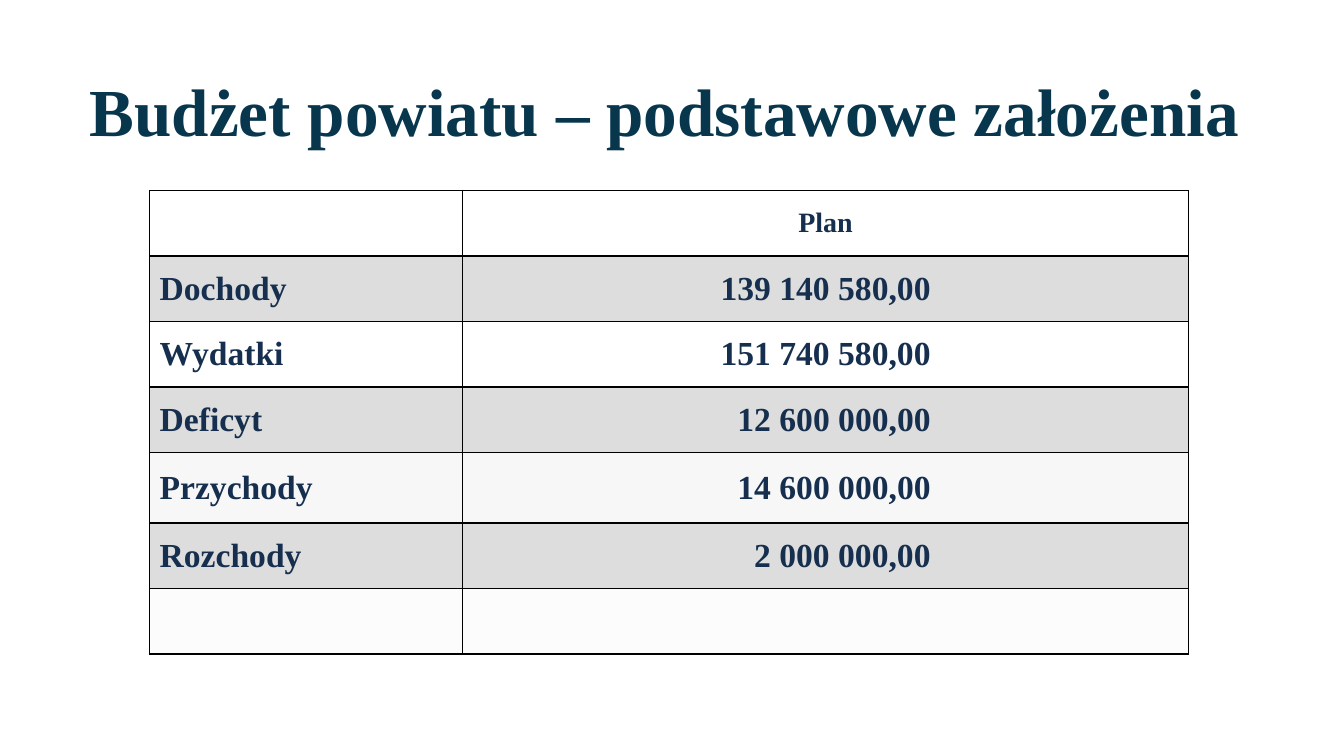
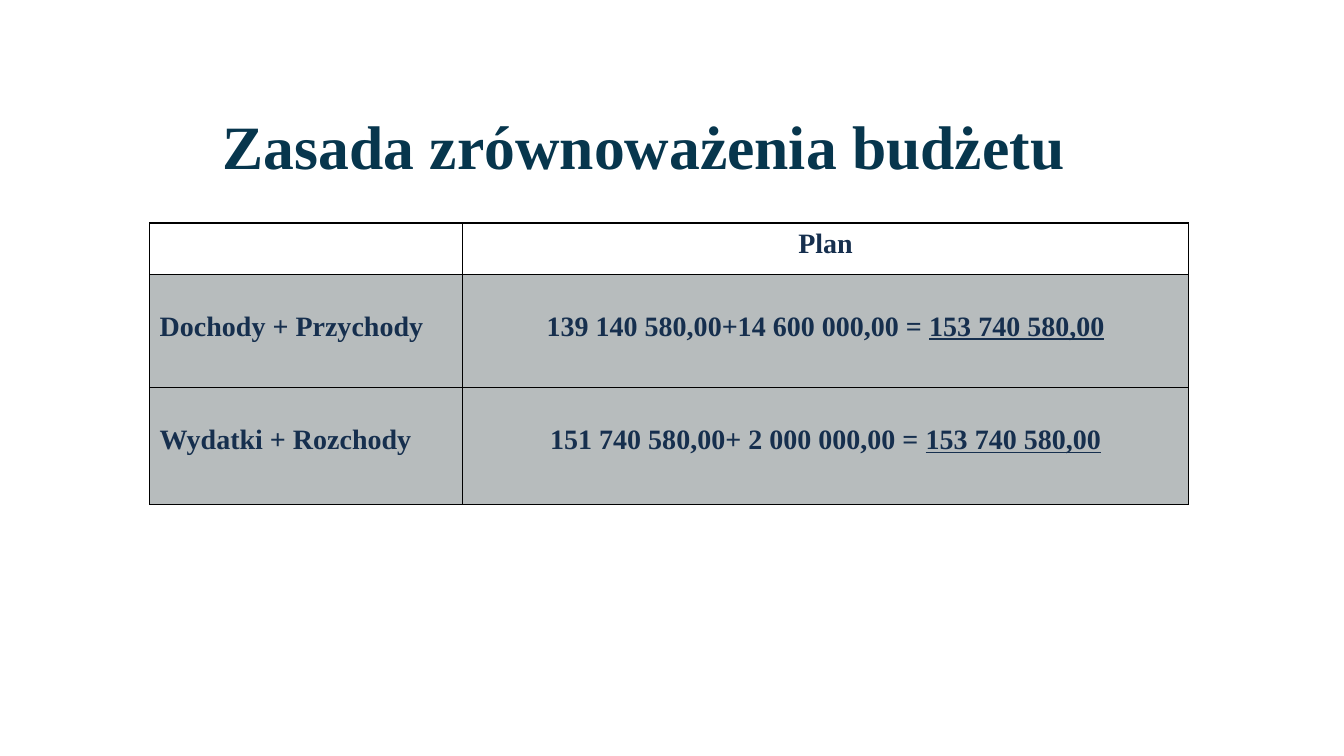
from lxml import etree
from pptx import Presentation, util as u
from pptx.dml.color import RGBColor
from pptx.enum import text
from pptx.oxml import ns

COLORS = {
    "title": "07364D",
    "ink": "162F4E",
    "border": "000000",
    "dark": "DDDDDD",
    "light": "F7F7F7",
    "pale": "FCFCFC",
    "slate": "B7BCBD",
}
FONT = {"name": "Times New Roman", "bold": True}
LABEL = {"alignment": text.PP_ALIGN.LEFT}
CENTERED = {"alignment": text.PP_ALIGN.CENTER}
AMOUNT = {"alignment": text.PP_ALIGN.RIGHT}
MIDDLE = {"vertical_anchor": text.MSO_ANCHOR.MIDDLE}
AMOUNT_CELL = MIDDLE | {"margin_right": u.Cm(6.5)}
LOWERED = {"margin_top": u.Cm(0.92)}
TABLE_LEFT = 3.77
COLUMNS = (7.89, 18.29)


def apply(target, values):
    """Set each named attribute on the target."""
    for name, value in values.items():
        setattr(target, name, value)


def write(paragraph, runs, size, color, layout):
    """Write (wording, font overrides) runs into a paragraph."""
    apply(paragraph, layout)
    for wording, overrides in runs:
        run = paragraph.add_run()
        run.text = wording
        apply(run.font, FONT | {"size": u.Pt(size)} | overrides)
        run.font.color.rgb = RGBColor.from_string(COLORS[color])


def add_title(slide, box, wording, size):
    """Place a centred heading in the box."""
    frame = slide.shapes.add_textbox(*map(u.Cm, box)).text_frame
    apply(frame, {"word_wrap": True, "margin_top": u.Cm(0.32)})
    write(frame.paragraphs[0], [(wording, {})], size, "title", CENTERED)


def outline(cell):
    """Draw a thin line along all four sides of a cell."""
    properties = cell._tc.get_or_add_tcPr()
    for place, side in enumerate(("lnL", "lnR", "lnT", "lnB")):
        line = etree.Element(ns.qn(f"a:{side}"), w=str(u.Pt(1)))
        fill = etree.SubElement(line, ns.qn("a:solidFill"))
        etree.SubElement(fill, ns.qn("a:srgbClr"), val=COLORS["border"])
        properties.insert(place, line)


def fill_cell(cell, content, fill):
    """Give a cell its fill, outline and optional (runs, size, layout, format)."""
    if fill:
        cell.fill.solid()
        cell.fill.fore_color.rgb = RGBColor.from_string(COLORS[fill])
    else:
        cell.fill.background()
    outline(cell)
    if content:
        runs, size, layout, cell_format = content
        apply(cell, cell_format)
        write(cell.text_frame.paragraphs[0], runs, size, "ink", layout)


def add_plan_table(slide, top, rows):
    """Place a two-column table of (height, fill, contents) rows."""
    heights = [height for height, _, _ in rows]
    box = (TABLE_LEFT, top, sum(COLUMNS), sum(heights))
    table = slide.shapes.add_table(len(rows), len(COLUMNS), *map(u.Cm, box)).table
    apply(table, {"first_row": False, "horz_banding": False})
    for column, width in zip(table.columns, COLUMNS):
        column.width = u.Cm(width)
    for row, (height, fill, contents) in zip(table.rows, rows):
        row.height = u.Cm(height)
        for cell, content in zip(row.cells, contents):
            fill_cell(cell, content, fill)


def header(cell_format):
    """Return the contents of a heading row."""
    return None, ([("Plan", {})], 20, CENTERED, cell_format)


def assumptions(slide):
    """Build the slide with the main budget figures."""
    add_title(slide, (0.99, 1.42, 31.52, 2.24), "Budżet powiatu – podstawowe założenia", 48)
    figures = [
        (1.65, "dark", "Dochody", "139 140 580,00"),
        (1.65, None, "Wydatki", "151 740 580,00"),
        (1.65, "dark", "Deficyt", "12 600 000,00"),
        (1.78, "light", "Przychody", "14 600 000,00"),
        (1.65, "dark", "Rozchody", "2 000 000,00"),
    ]
    body = [
        (height, fill, (([(label, {})], 24, LABEL, MIDDLE),
                        ([(amount, {})], 24, AMOUNT, AMOUNT_CELL)))
        for height, fill, label, amount in figures
    ]
    first, last = (1.65, None, header(MIDDLE)), (1.65, "pale", (None, None))
    add_plan_table(slide, 4.8, [first, *body, last])


def balance(slide):
    """Build the slide that compares both sides of the budget."""
    add_title(slide, (5, 2.41, 22.86, 2.44), "Zasada zrównoważenia budżetu ", 44)
    sums = [
        (2.85, "Dochody + Przychody", "139 140 580,00+14 600 000,00 = "),
        (2.95, "Wydatki + Rozchody", "151 740 580,00+ 2 000 000,00 = "),
    ]
    total = ("153 740 580,00", {"underline": True})
    body = [
        (height, "slate", (([(label, {})], 20, LABEL, LOWERED),
                           ([(addends, {}), total], 20, CENTERED, LOWERED)))
        for height, label, addends in sums
    ]
    add_plan_table(slide, 5.62, [(1.3, None, header({})), *body])


def main():
    """Build and save the presentation."""
    deck = Presentation()
    apply(deck, {"slide_width": u.Cm(33.87), "slide_height": u.Cm(19.05)})
    for build in (assumptions, balance):
        build(deck.slides.add_slide(deck.slide_layouts[6]))
    deck.save("out.pptx")


if __name__ == "__main__":
    main()
